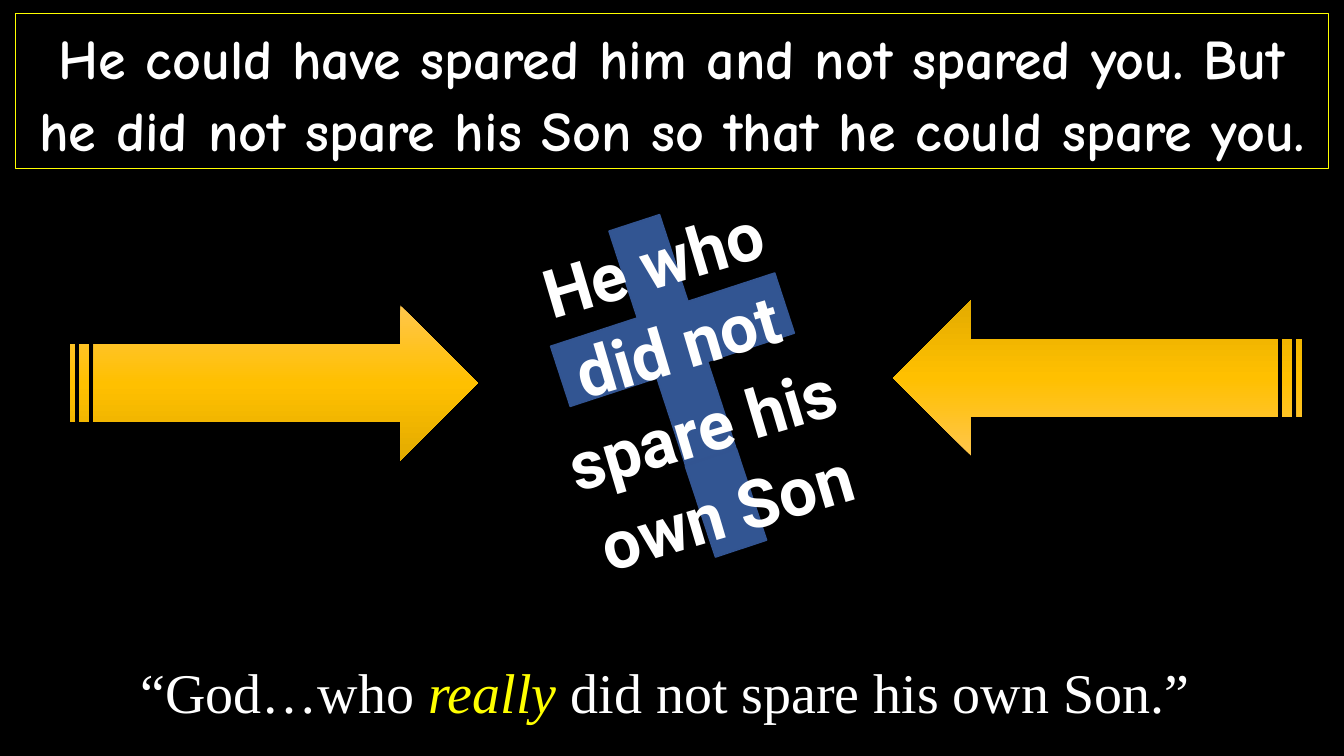
import copy
from dataclasses import dataclass

import pptx
import pptx.dml.color
import pptx.enum.shapes
import pptx.enum.text
import pptx.oxml
import pptx.oxml.ns
import pptx.util
from pptx.util import Inches

COLORS = {
    "black": "000000", "white": "FFFFFF", "yellow": "FFFF00",
    "cross": "4472C4", "cross_edge": "325491",
    "gold_light": "FFC64B", "gold": "FFC000", "gold_dark": "E3AB00",
}
SHAPES = pptx.enum.shapes.MSO_SHAPE


@dataclass
class Box:
    left: float
    top: float
    width: float
    height: float
    rotation: float = 0

    def lengths(self) -> tuple:
        return tuple(Inches(v) for v in (self.left, self.top, self.width, self.height))


@dataclass
class Run:
    text: str
    color: str = "white"
    italic: bool = False


def rgb(name: str) -> pptx.dml.color.RGBColor:
    return pptx.dml.color.RGBColor.from_string(COLORS[name])


def effect_list(blur: float, distance: float, opacity: int):
    """Soft black shadow falling straight down; blur and distance in points."""
    return pptx.oxml.parse_xml(
        f'<a:effectLst {pptx.oxml.ns.nsdecls("a")}>'
        f'<a:outerShdw blurRad="{pptx.util.Pt(blur)}" dist="{pptx.util.Pt(distance)}" '
        f'dir="5400000" algn="ctr" rotWithShape="0"><a:srgbClr val="{COLORS["black"]}">'
        f'<a:alpha val="{opacity * 1000}"/></a:srgbClr></a:outerShdw></a:effectLst>')


def add_preset(slide, preset, box: Box):
    shape = slide.shapes.add_shape(preset, *box.lengths())
    shape.rotation = box.rotation
    shape.shadow.inherit = False
    return shape


def add_cross_part(slide, preset, box: Box):
    part = add_preset(slide, preset, box)
    part.fill.solid()
    part.fill.fore_color.rgb = rgb("cross")
    fill_color = part.fill._xPr.find(".//" + pptx.oxml.ns.qn("a:srgbClr"))
    fill_color.append(pptx.oxml.parse_xml(
        f'<a:alpha {pptx.oxml.ns.nsdecls("a")} val="75000"/>'))
    part.line.color.rgb = rgb("cross_edge")
    part.line.width = pptx.util.Pt(1)
    return part


def add_gold_arrow(slide, box: Box) -> None:
    arrow = add_preset(slide, SHAPES.STRIPED_RIGHT_ARROW, box)
    arrow.line.fill.background()
    arrow.fill.gradient()
    arrow.fill.gradient_angle = 270
    stop_list = arrow._element.spPr.find(".//" + pptx.oxml.ns.qn("a:gsLst"))
    stop_list.insert(1, copy.deepcopy(stop_list[0]))
    golds = ("gold_light", "gold", "gold_dark")
    for stop, position, gold in zip(arrow.fill.gradient_stops, (0, 0.5, 1), golds):
        stop.position = position
        stop.color.rgb = rgb(gold)
    properties = arrow._element.spPr
    properties.replace(properties.find(pptx.oxml.ns.qn("a:effectLst")),
                       effect_list(4.5, 1.5, 63))


def write(shape, runs: list[Run], font: str, size: int, bold: bool = False,
          spacing: float = 1.0):
    frame = shape.text_frame
    frame.word_wrap = True
    frame.auto_size = pptx.enum.text.MSO_AUTO_SIZE.SHAPE_TO_FIT_TEXT
    paragraph = frame.paragraphs[0]
    paragraph.alignment = pptx.enum.text.PP_ALIGN.CENTER
    paragraph.line_spacing = spacing
    paragraph.font.name = font
    paragraph.font.size = pptx.util.Pt(size)
    paragraph.font.bold = bold
    for item in runs:
        run = paragraph.add_run()
        run.text = item.text
        run.font.color.rgb = rgb(item.color)
        run.font.italic = item.italic
    return paragraph


def main() -> None:
    deck = pptx.Presentation()
    deck.slide_width, deck.slide_height = Inches(13.33), Inches(7.5)
    slide = deck.slides.add_slide(deck.slide_layouts[6])
    slide.background.fill.solid()
    slide.background.fill.fore_color.rgb = rgb("black")

    # Tilted cross: foot, then arms
    add_cross_part(slide, SHAPES.MATH_MINUS, Box(6.55, 3.85, 1.3, 2.28, 71.7))
    arms = add_cross_part(slide, SHAPES.CROSS, Box(5.5, 2.15, 2.34, 2.44, 341.9))
    arms.adjustments[0] = 0.387

    # Verse over the cross
    verse_box = Box(5.25, 2.04, 3.17, 3.54, 343.5)
    verse = slide.shapes.add_textbox(*verse_box.lengths())
    verse.rotation = verse_box.rotation
    verse_line = write(verse, [Run("He who did not spare his own Son")],
                       "Roboto", 48, bold=True, spacing=1.07)
    verse_line.runs[0].font._element.append(effect_list(4, 3, 80))

    # Quotation at the foot
    quotation = slide.shapes.add_textbox(*Box(0, 6.47, 13.33, 0.77).lengths())
    write(quotation, [Run("“God…who "), Run("really", "yellow", True),
                      Run(" did not spare his own Son.” ")], "Times New Roman", 40)

    # Framed statement at the top
    statement = add_preset(slide, SHAPES.RECTANGLE, Box(0.15, 0.13, 13.03, 1.54))
    statement.fill.background()
    statement.line.color.rgb = rgb("yellow")
    statement.line.width = pptx.util.Pt(0.75)
    write(statement, [Run("He could have spared him and not spared you. But he did not "
                          "spare his Son so that he could spare you.")],
          "Comic Neue", 40, bold=True, spacing=1.07)

    # Arrows pointing at the cross
    add_gold_arrow(slide, Box(0.69, 3.03, 4.05, 1.54))
    add_gold_arrow(slide, Box(8.86, 2.98, 4.05, 1.54, 180))

    deck.save("out.pptx")


if __name__ == "__main__":
    main()
